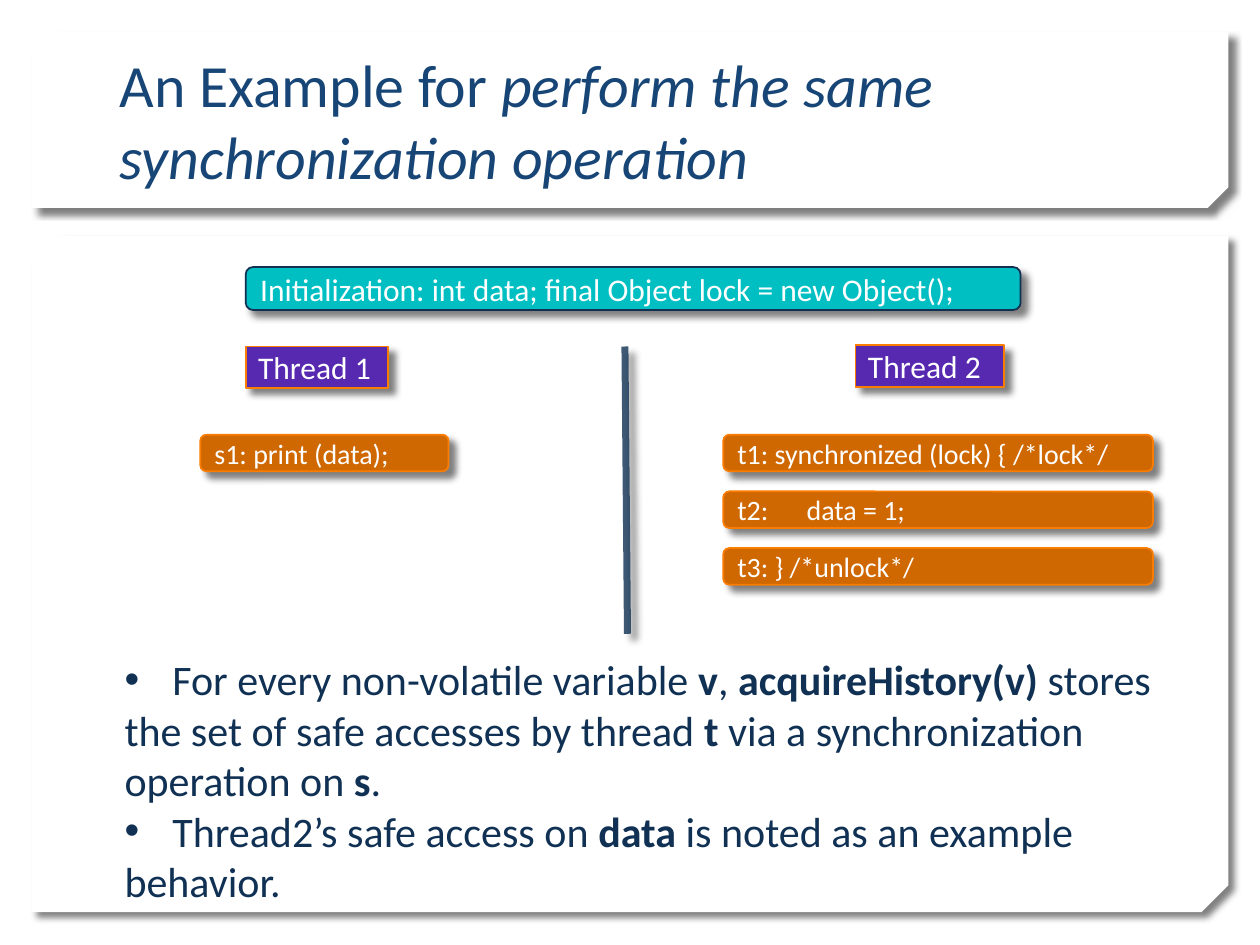
from lxml import etree
from pptx import Presentation
from pptx.dml.color import RGBColor
from pptx.enum import shapes, text
from pptx.oxml import parse_xml
from pptx.oxml.ns import nsdecls, qn
from pptx.util import Inches, Pt

WHITE = RGBColor(0xFF, 0xFF, 0xFF)
NAVY = RGBColor(0x10, 0x31, 0x54)
BLUE = RGBColor(0x17, 0x45, 0x76)
TEAL = RGBColor(0x00, 0xBF, 0xC3)
PURPLE = RGBColor(0x57, 0x29, 0xB1)
RUST = RGBColor(0xD0, 0x68, 0x01)
ORANGE = RGBColor(0xFA, 0x7C, 0x00)

RECT = shapes.MSO_SHAPE.RECTANGLE
ROUND = shapes.MSO_SHAPE.ROUNDED_RECTANGLE


def add_shadow(sp):
    sp._element.spPr.append(parse_xml(
        f'<a:effectLst {nsdecls("a")}><a:outerShdw blurRad="{Pt(4)}" dist="{Pt(5)}" '
        'dir="2700000" algn="tl" rotWithShape="0"><a:srgbClr val="000000">'
        '<a:alpha val="50000"/></a:srgbClr></a:outerShdw></a:effectLst>'))


def add_run(p, content, size, color):
    r = p.add_run()
    r.text = content
    r.font.name = "Calibri"
    r.font.size = Pt(size)
    r.font.color.rgb = color
    return r


prs = Presentation()
prs.slide_width = Inches(10)
prs.slide_height = Inches(7.5)
s = prs.slides.add_slide(prs.slide_layouts[6])

for top, height, snip in [(1.87, 5.37, 0.04), (0.25, 1.4, 0.117)]:
    sp = s.shapes.add_shape(shapes.MSO_SHAPE.SNIP_2_DIAG_RECTANGLE,
                            Inches(0.25), Inches(top), Inches(9.5), Inches(height))
    sp.adjustments[0] = 0
    sp.adjustments[1] = snip
    sp._element.spPr.xfrm.set("flipV", "1")
    sp.fill.solid()
    sp.fill.fore_color.rgb = WHITE
    sp.line.fill.background()
    add_shadow(sp)

title = s.shapes.add_textbox(Inches(0.85), Inches(0.32), Inches(8.29), Inches(1.25))
tf = title.text_frame
tf.word_wrap = True
tf.vertical_anchor = text.MSO_ANCHOR.BOTTOM
p = tf.paragraphs[0]
add_run(p, "An Example for ", 34.2, BLUE)
add_run(p, "perform the same synchronization operation", 34.2, BLUE).font.italic = True

boxes = [
    (ROUND, 1.95, 2.12, 6.15, 0.34, TEAL, NAVY, 18,
     "Initialization: int data; final Object lock = new Object();"),
    (ROUND, 1.59, 3.45, 1.97, 0.29, RUST, ORANGE, 16, "s1: print (data);"),
    (RECT, 1.95, 2.75, 1.13, 0.33, PURPLE, ORANGE, 18, "Thread 1"),
    (RECT, 6.79, 2.74, 1.18, 0.33, PURPLE, ORANGE, 18, "Thread 2"),
]
steps = ["t1: synchronized (lock) { /*lock*/", "t2:\tdata = 1;", "t3: } /*unlock*/"]
for i, step in enumerate(steps):
    boxes.append((ROUND, 5.74, 3.45 + 0.45 * i, 3.41, 0.29, RUST, ORANGE, 16, step))

for kind, left, top, width, height, fill, line, size, content in boxes:
    sp = s.shapes.add_shape(kind, Inches(left), Inches(top), Inches(width), Inches(height))
    sp.fill.solid()
    sp.fill.fore_color.rgb = fill
    sp.line.color.rgb = line
    sp.line.width = Pt(1)
    add_shadow(sp)
    tf = sp.text_frame
    tf.word_wrap = True
    tf.vertical_anchor = text.MSO_ANCHOR.MIDDLE
    p = tf.paragraphs[0]
    p.alignment = text.PP_ALIGN.LEFT
    add_run(p, content, size, WHITE)
    if "\t" in content:
        tabs = etree.SubElement(p._p.get_or_add_pPr(), qn("a:tabLst"))
        etree.SubElement(tabs, qn("a:tab"), pos=str(Inches(0.55)), algn="l")

divider = s.shapes.add_connector(shapes.MSO_CONNECTOR.STRAIGHT,
                                 Inches(4.96), Inches(2.75), Inches(4.98), Inches(5.03))
divider.line.color.rgb = NAVY
divider.line.width = Pt(4)
color = divider._element.spPr.find(".//" + qn("a:srgbClr"))
etree.SubElement(color, qn("a:alpha"), val="80000")
add_shadow(divider)

notes = [
    (True, ["For every non-volatile variable ", "v", ", ", "acquireHistory(v)", " stores"]),
    (False, ["the set of safe accesses by thread ", "t", " via a synchronization"]),
    (False, ["operation on ", "s", "."]),
    (True, ["Thread2’s safe access on ", "data", " is noted as an example"]),
    (False, ["behavior."]),
]
body = s.shapes.add_textbox(Inches(0.89), Inches(5.14), Inches(8.57), Inches(2.52))
tf = body.text_frame
tf.word_wrap = False
for i, (bullet, parts) in enumerate(notes):
    p = tf.add_paragraph() if i else tf.paragraphs[0]
    if bullet:
        pPr = p._p.get_or_add_pPr()
        pPr.set("marL", str(Inches(0.38)))
        pPr.set("indent", str(-Inches(0.38)))
        etree.SubElement(pPr, qn("a:buFont"), typeface="Arial")
        etree.SubElement(pPr, qn("a:buChar"), char="•")
    for j, part in enumerate(parts):
        add_run(p, part, 24, NAVY).font.bold = j % 2 == 1

prs.save("out.pptx")
